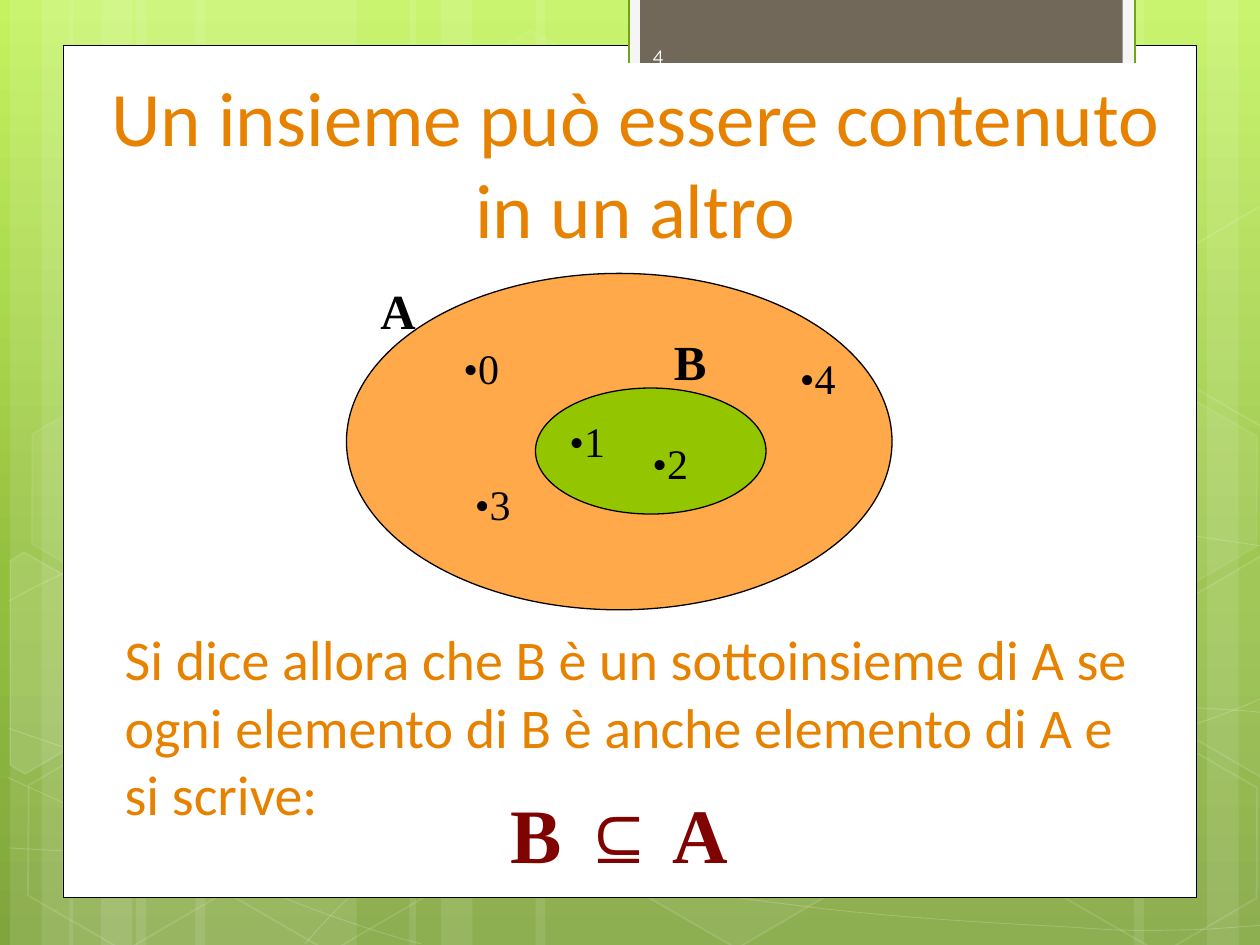
import math

from lxml import etree
from pptx import Presentation, util as u
from pptx.dml.color import RGBColor
from pptx.enum import shapes, text
from pptx.oxml.ns import qn

WHITE = RGBColor(0xFF, 0xFF, 0xFF)
BLACK = RGBColor(0, 0, 0)
ORANGE = RGBColor(0xE6, 0x82, 0x00)
SET_A = RGBColor(0xFF, 0xA9, 0x4A)
SET_B = RGBColor(0x94, 0xC6, 0x00)
DARK_RED = RGBColor(0x7F, 0x04, 0x01)
TAB_EDGE = RGBColor(0x74, 0xA5, 0x10)
TAB_PALE = RGBColor(0xF5, 0xF5, 0xF5)
TAB_BROWN = RGBColor(0x71, 0x68, 0x5A)
NUMBER = RGBColor(0xFE, 0xFE, 0xFE)
GRADIENT = [(0, RGBColor(0xC3, 0xF3, 0x5F)), (62, RGBColor(0x93, 0xBF, 0x3F)),
            (100, RGBColor(0x81, 0xA5, 0x3E))]
SERIF = "Times New Roman"
TILT = 30

# All positions below are in inches; at() turns them into Cm.
TITLE = "Un insieme può essere contenuto in un altro"
DEFINITION = ("Si dice allora che B è un sottoinsieme di A se ogni elemento "
              "di B è anche elemento di A e si scrive:")
# Words, left, top, width
ELEMENTS = [("•1", 4.42, 3.25, 0.58), ("•2", 5.08, 3.42, 0.75), ("•0", 3.58, 2.67, 0.67),
            ("•3", 3.67, 3.75, 0.58), ("•4", 6.25, 2.75, 0.58)]
SET_NAMES = [("B", 5.25, 2.58, 0.83), ("A", 2.92, 2.18, 0.67)]

# Left edge and width of the background stripes
STRIPES = [(1.08, 1.75), (0.08, 0.5), (0.33, 0.83), (1.55, 1.75), (0.55, 0.5),
           (0.8, 0.83), (7.33, 1.75), (9.58, 0.5), (9, 0.83), (4.25, 3.08),
           (3.25, 0.5), (3.5, 0.83)]
TURNED_STRIPES = {7.33, 9.58, 9}
# Start point, then control, control, end for each Bezier segment
CURVES = [
    [(0.07, 6.73), (0.61, 6.76), (1.15, 6.79), (1.9, 6.78), (2.65, 6.77), (3.58, 6.75),
     (4.58, 6.65), (5.58, 6.55), (7, 6.36), (7.92, 6.17), (8.83, 5.98), (9.77, 5.68),
     (10.07, 5.51)],
    [(0.07, 4.77), (0.36, 4.61), (0.65, 4.46), (1.21, 4.31), (1.78, 4.16), (2.59, 3.94),
     (3.47, 3.87), (4.36, 3.8), (5.44, 3.79), (6.54, 3.87), (7.64, 3.95), (9.47, 4.26),
     (10.07, 4.34)],
    [(0.06, 6.17), (1.27, 6.72), (2.47, 7.27), (3.34, 7.49)],
    [(0.07, 5.78), (0.38, 5.89), (0.7, 6), (1.28, 6.16), (1.86, 6.31), (2.73, 6.56),
     (3.57, 6.73), (4.4, 6.9), (5.45, 7.08), (6.28, 7.18), (7.11, 7.29), (8, 7.33),
     (8.53, 7.36), (9.05, 7.4), (9.19, 7.38), (9.45, 7.38), (9.71, 7.37), (9.89, 7.35),
     (10.07, 7.34)],
    [(2.42, 7.49), (2.6, 7.29), (2.78, 7.09), (3.02, 6.91), (3.26, 6.73), (3.6, 6.53),
     (3.88, 6.39), (4.16, 6.25), (4.33, 6.19), (4.7, 6.09), (5.06, 5.99), (5.73, 5.85),
     (6.08, 5.78), (6.44, 5.71), (6.49, 5.71), (6.8, 5.69), (7.11, 5.66), (7.6, 5.63),
     (7.94, 5.62), (8.29, 5.61), (8.86, 5.62), (8.86, 5.62), (8.86, 5.62), (9.53, 5.62),
     (9.53, 5.62), (9.71, 5.63), (9.88, 5.64), (9.97, 5.65), (10.06, 5.66), (10.03, 5.65),
     (10.06, 5.66)],
]
# Left, top, fill opacity (None: no fill), line opacity
HEXAGONS = [(3.34, 0.36, 4, 8), (4.97, 5.89, 6, 12), (0.11, 5.91, None, 12),
            (0.14, 3.12, 7, 8), (1.74, 5.92, None, 12), (7.53, 4.53, 10, 12),
            (8.34, 5.93, None, 12), (8.34, 3.14, 7, 8)]
# Hexagons cut by the slide edge: outline as it appears, center, fill opacity
CUT_HEXAGONS = [
    ([(0.08, 4.45), (0.19, 4.38), (0.96, 4.82), (0.95, 5.7), (0.2, 6.14), (0.08, 6.07)],
     (0.36, 5.35), 10),
    ([(9.26, 4.85), (10.01, 4.41), (10.09, 4.46), (10.09, 6.13), (10.02, 6.17),
      (9.26, 5.73)], (9.85, 5.2), 4),
    ([(9.26, 2.07), (10.01, 1.63), (10.1, 1.68), (10.09, 3.35), (10.02, 3.39),
      (9.26, 2.95)], (9.85, 2.41), None),
]


def at(*inches):
    return [u.Cm(v * 2.54) for v in inches]


def set_opacity(fill_parent, percent):
    color = fill_parent.find(qn("a:solidFill"))[0]
    etree.SubElement(color, qn("a:alpha"), val=str(percent * 1000))


def style(sp, fill=None, line=None, width=0.75, fill_opacity=100, line_opacity=100):
    sp.shadow.inherit = False
    sp_pr = sp._element.spPr
    if fill is None:
        sp.fill.background()
    else:
        sp.fill.solid()
        sp.fill.fore_color.rgb = fill
        if fill_opacity < 100:
            set_opacity(sp_pr, fill_opacity)
    if line is None:
        sp.line.fill.background()
    else:
        sp.line.color.rgb = line
        sp.line.width = u.Pt(width)
        if line_opacity < 100:
            set_opacity(sp_pr.find(qn("a:ln")), line_opacity)
    return sp


def add_shape(s, kind, box, **look):
    return style(s.shapes.add_shape(kind, *at(*box)), **look)


def add_outline(s, points, close, **look):
    points = [at(*point) for point in points]
    builder = s.shapes.build_freeform(*points[0], scale=1.0)
    builder.add_line_segments(points[1:], close=close)
    return style(builder.convert_to_shape(), **look)


def bend(sp):
    """Turn every three line segments of a freeform into one Bezier segment."""
    outline = sp._element.find(".//" + qn("a:path"))
    lines = outline.findall(qn("a:lnTo"))
    for i in range(0, len(lines), 3):
        curve = etree.SubElement(outline, qn("a:cubicBezTo"))
        for line in lines[i:i + 3]:
            curve.append(line[0])
            outline.remove(line)


def turn(point, center, degrees):
    angle = math.radians(degrees)
    dx, dy = point[0] - center[0], point[1] - center[1]
    return (center[0] + dx * math.cos(angle) - dy * math.sin(angle),
            center[1] + dx * math.sin(angle) + dy * math.cos(angle))


def add_text(s, words, box, size, font=SERIF, color=BLACK, bold=False, fill=None,
             align=text.PP_ALIGN.LEFT, anchor=text.MSO_ANCHOR.TOP):
    sp = s.shapes.add_textbox(*at(*box))
    if fill is not None:
        sp.fill.solid()
        sp.fill.fore_color.rgb = fill
    tf = sp.text_frame
    tf.word_wrap = True
    tf.vertical_anchor = anchor
    p = tf.paragraphs[0]
    p.alignment = align
    r = p.add_run()
    r.text = words
    r.font.name, r.font.size, r.font.bold = font, u.Pt(size), bold
    r.font.color.rgb = color


def paint_background(s):
    fill = s.background.fill
    fill.gradient()
    fill.gradient_angle = 270
    stops = s._element.find(".//" + qn("a:gsLst"))
    for stop in list(stops):
        stops.remove(stop)
    for percent, color in GRADIENT:
        stop = etree.SubElement(stops, qn("a:gs"), pos=str(percent * 1000))
        etree.SubElement(stop, qn("a:srgbClr"), val=str(color))


def add_decoration(s):
    for left, width in STRIPES:
        sp = add_shape(s, shapes.MSO_SHAPE.RECTANGLE, (left, 0, width, 7.5),
                       fill=WHITE, fill_opacity=10)
        sp.rotation = 180 if left in TURNED_STRIPES else 0
    for curve in CURVES:
        bend(add_outline(s, curve, False, line=WHITE, width=0.5, line_opacity=20))
    for left, top, opacity, line_opacity in HEXAGONS:
        sp = add_shape(s, shapes.MSO_SHAPE.HEXAGON, (left, top, 1.75, 1.52),
                       fill=WHITE if opacity else None, fill_opacity=opacity,
                       line=WHITE, width=1, line_opacity=line_opacity)
        sp.adjustments[0] = 0.285
        sp.rotation = TILT
    for points, center, opacity in CUT_HEXAGONS:
        sp = add_outline(s, [turn(point, center, -TILT) for point in points], True,
                         fill=WHITE if opacity else None, fill_opacity=opacity,
                         line=WHITE, width=1, line_opacity=12)
        sp.rotation = TILT


def main():
    prs = Presentation()
    prs.slide_width, prs.slide_height = at(10, 7.5)
    s = prs.slides.add_slide(prs.slide_layouts[6])
    rect, oval = shapes.MSO_SHAPE.RECTANGLE, shapes.MSO_SHAPE.OVAL
    center = text.PP_ALIGN.CENTER
    paint_background(s)
    add_decoration(s)
    add_shape(s, rect, (0.5, 0.36, 9, 6.76), fill=WHITE, line=BLACK, width=0.5)
    add_shape(s, rect, (4.99, -0.02, 4.02, 0.76), fill=TAB_PALE, line=TAB_EDGE, width=1.25)
    add_shape(s, rect, (5.08, -0.02, 3.83, 0.68), fill=TAB_BROWN)
    add_text(s, "4", (5.08, 0.25, 1.46, 0.4), 12, font="Quicksand", color=NUMBER,
             anchor=text.MSO_ANCHOR.MIDDLE)
    add_text(s, TITLE, (0.67, 0.5, 8.75, 1.58), 44, font="Calibri", color=ORANGE,
             fill=WHITE, align=center)
    add_shape(s, oval, (2.75, 2.17, 4.33, 2.67), fill=SET_A, line=BLACK)
    add_shape(s, oval, (4.25, 3.08, 1.83, 1), fill=SET_B, line=BLACK)
    for words, left, top, width in ELEMENTS:
        add_text(s, words, (left, top, width, 0.5), 24)
    for words, left, top, width in SET_NAMES:
        add_text(s, words, (left, top, width, 0.57), 28, bold=True)
    add_text(s, DEFINITION, (0.89, 4.91, 8.25, 1.72), 32, font="Calibri", color=ORANGE,
             fill=WHITE)
    add_text(s, "B ⊆ A", (3.25, 6.19, 3.33, 0.83), 44, color=DARK_RED, bold=True,
             align=center)
    prs.save("out.pptx")


if __name__ == "__main__":
    main()
